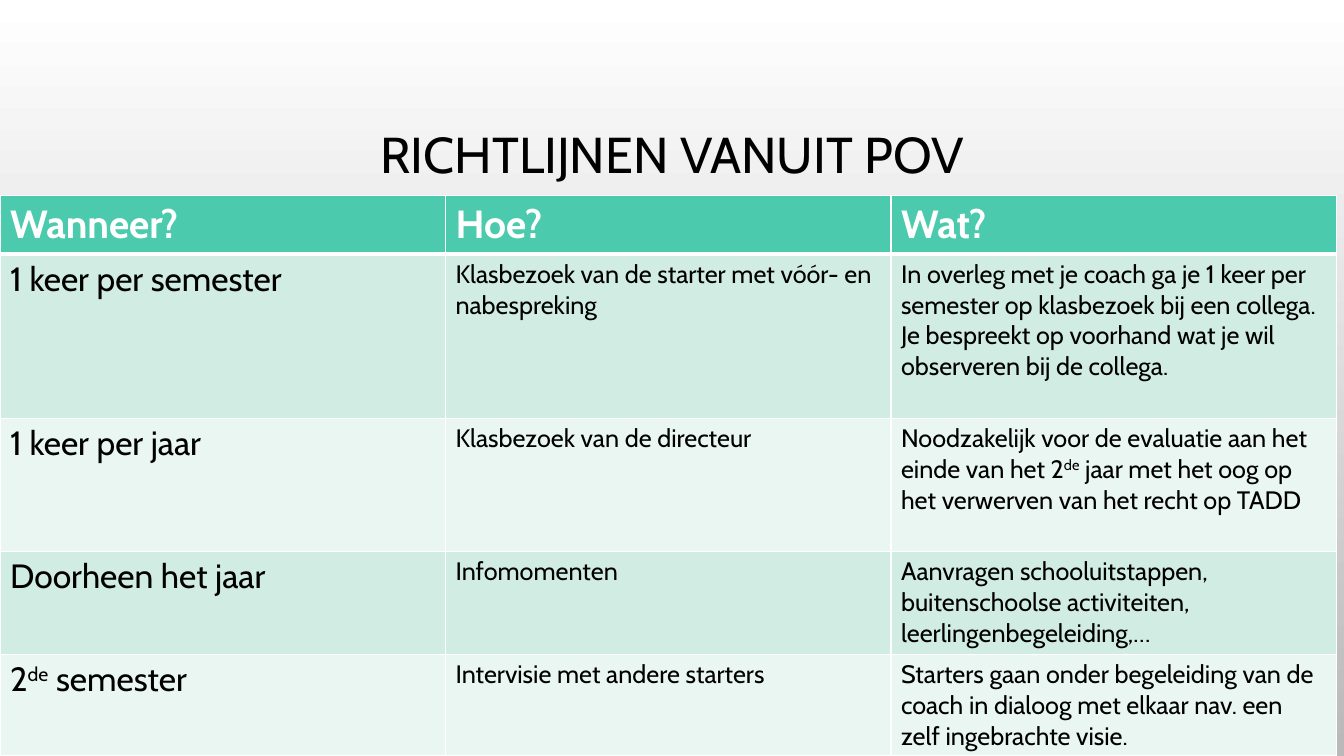
from lxml import etree
from pptx import Presentation
from pptx.dml.color import RGBColor
from pptx.enum import text
from pptx.oxml import ns
from pptx.util import Pt

FONT = "Cabin"
BLACK = RGBColor(0, 0, 0)
WHITE = RGBColor(255, 255, 255)
GREY = RGBColor(0xB9, 0xB9, 0xB9)
GREEN = RGBColor(0x4B, 0xCA, 0xAD)
BANDS = (RGBColor(0xD0, 0xEC, 0xE3), RGBColor(0xE9, 0xF6, 0xF1))

COL_WIDTH = 318.24
ROW_HEIGHTS = (41.76, 117.36, 95.04, 73.44, 72.72)
# Text between carets is superscript.
ROWS = (
    ("Wanneer?", "Hoe?", "Wat?"),
    ("1 keer per semester",
     "Klasbezoek van de starter met vóór- en nabespreking",
     "In overleg met je coach ga je 1 keer per semester op klasbezoek bij een "
     "collega. Je bespreekt op voorhand wat je wil observeren bij de collega."),
    ("1 keer per jaar",
     "Klasbezoek van de directeur",
     "Noodzakelijk voor de evaluatie aan het einde van het 2^de^ jaar met het "
     "oog op het verwerven van het recht op TADD"),
    ("Doorheen het jaar",
     "Infomomenten",
     "Aanvragen schooluitstappen, buitenschoolse activiteiten, "
     "leerlingenbegeleiding,…"),
    ("2^de^ semester",
     "Intervisie met andere starters",
     "Starters gaan onder begeleiding van de coach in dialoog met elkaar nav. "
     "een zelf ingebrachte visie."),
)


def set_background(s):
    fill = s.background.fill
    fill.gradient()
    fill.gradient_angle = 270
    for stop, color, pos in zip(fill.gradient_stops, (WHITE, GREY), (0, 1)):
        stop.color.rgb = color
        stop.position = pos


def write(p, content, size, color, bold=False):
    """Fill a paragraph, raising the parts between carets."""
    for i, part in enumerate(content.split("^")):
        r = p.add_run()
        r.text = part
        r.font.name = FONT
        r.font.size = Pt(size)
        r.font.bold = bold
        r.font.color.rgb = color
        if i % 2:
            r.font._element.set("baseline", "30000")


def add_title(s, content):
    tf = s.shapes.add_textbox(Pt(72), Pt(48.96), Pt(816), Pt(126)).text_frame
    tf.word_wrap = True
    tf.vertical_anchor = text.MSO_ANCHOR.MIDDLE
    p = tf.paragraphs[0]
    p.alignment = text.PP_ALIGN.CENTER
    p.line_spacing = 0.9
    write(p, content, 36, BLACK)


def set_borders(cell, top, bottom):
    tcPr = cell._tc.get_or_add_tcPr()
    for side, width in (("L", 1), ("R", 1), ("T", top), ("B", bottom)):
        ln = etree.SubElement(tcPr, ns.qn(f"a:ln{side}"), w=str(Pt(width)))
        fill = etree.SubElement(ln, ns.qn("a:solidFill"))
        etree.SubElement(fill, ns.qn("a:srgbClr"), val=str(WHITE))


def add_guideline_table(s):
    table = s.shapes.add_table(len(ROWS), len(ROWS[0]), 0, Pt(139.68),
                               Pt(3 * COL_WIDTH), Pt(sum(ROW_HEIGHTS))).table
    for col in table.columns:
        col.width = Pt(COL_WIDTH)
    for i, (row, height) in enumerate(zip(ROWS, ROW_HEIGHTS)):
        table.rows[i].height = Pt(height)
        header = i == 0
        for j, content in enumerate(row):
            cell = table.cell(i, j)
            set_borders(cell, 3 if i == 1 else 1, 3 if header else 1)
            cell.fill.solid()
            cell.fill.fore_color.rgb = GREEN if header else BANDS[(i - 1) % 2]
            size = 28 if header else 24 if j == 0 else 18
            write(cell.text_frame.paragraphs[0], content, size,
                  WHITE if header else BLACK, header)


def main():
    prs = Presentation()
    prs.slide_width, prs.slide_height = Pt(960), Pt(540)
    s = prs.slides.add_slide(prs.slide_layouts[6])
    set_background(s)
    add_title(s, "RICHTLIJNEN VANUIT POV")
    add_guideline_table(s)
    prs.save("out.pptx")


if __name__ == "__main__":
    main()
